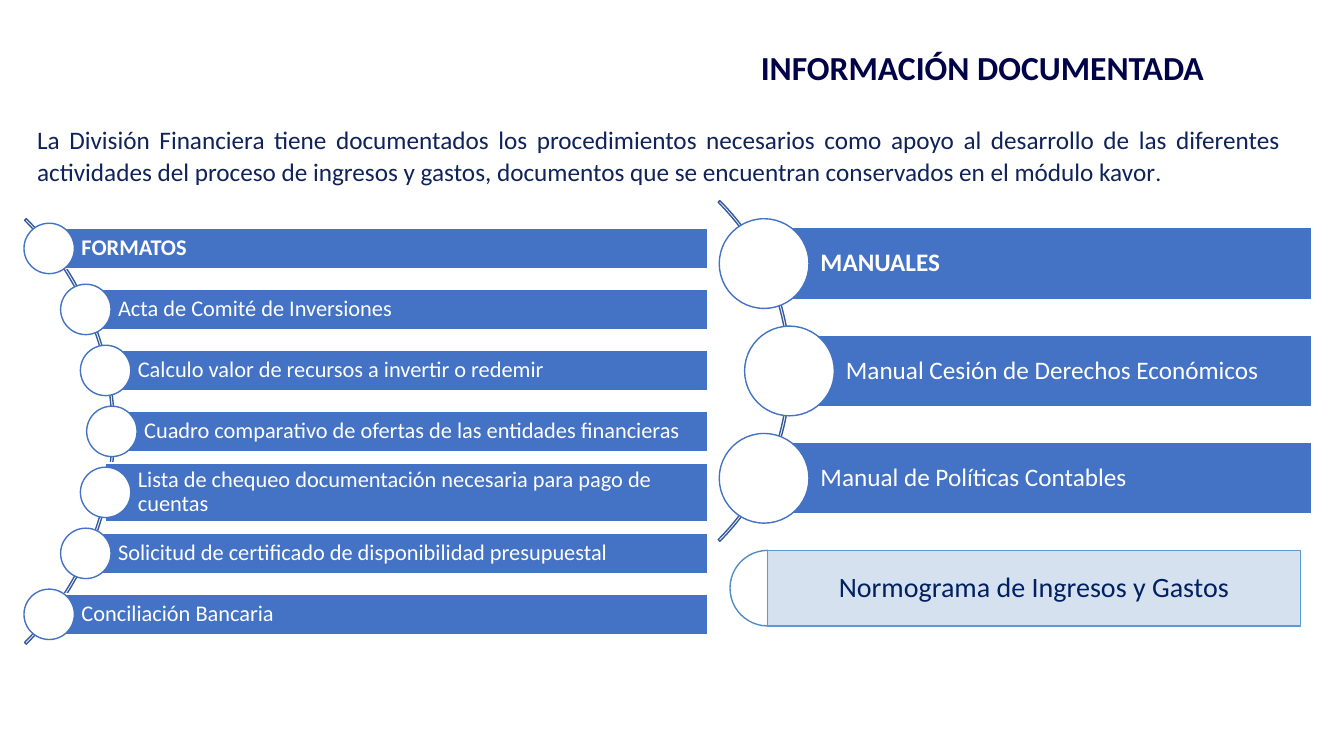
from math import sqrt

from lxml import etree
from pptx import Presentation
from pptx.dml.color import RGBColor
from pptx.enum import shapes, text
from pptx.oxml.ns import qn
from pptx.util import Inches, Pt

TITLE = "INFORMACIÓN DOCUMENTADA"
INTRO = ("La División Financiera tiene documentados los procedimientos necesarios "
         "como apoyo al desarrollo de las diferentes actividades del proceso de "
         "ingresos y gastos, documentos que se encuentran conservados en el módulo kavor")
NORMOGRAM = "Normograma de Ingresos y Gastos"

# Lengths in inches; the circles sit on an arc around (cx, cy).
MANUALS = dict(
    rows=["MANUALES", "Manual Cesión de Derechos Económicos",
          "Manual de Políticas Contables"],
    cx=5.45, cy=3.68, radius=2.38, arc=4.78, thickness=0.005, pitch=1.065,
    right=13.01, bar=0.71, circle=0.89, inset=0.56, margin=0.05, size=18, tall={})
FORMATS = dict(
    rows=["FORMATOS", "Acta de Comité de Inversiones",
          "Calculo valor de recursos a invertir o redemir",
          "Cuadro comparativo de ofertas de las entidades financieras",
          "Lista de chequeo documentación necesaria para pago de cuentas",
          "Solicitud de certificado de disponibilidad presupuestal",
          "Conciliación Bancaria"],
    cx=-1.85, cy=4.28, radius=2.96, arc=5.97, thickness=0.004, pitch=0.605,
    right=7.02, bar=0.4, circle=0.5, inset=0.32, margin=0.04, size=16, tall={4: 0.58})

WHITE = RGBColor(0xFF, 0xFF, 0xFF)
BLUE = RGBColor(0x44, 0x72, 0xC4)
ARC_BLUE = RGBColor(0x36, 0x5B, 0x9D)
PIE_BLUE = RGBColor(0x53, 0x8D, 0xC1)
BOX_LINE = RGBColor(0x5B, 0x9B, 0xD5)
BOX_FILL = RGBColor(0xD2, 0xDE, 0xEF)
BOX_TEXT = RGBColor(0x00, 0x20, 0x60)
TITLE_NAVY = RGBColor(0x00, 0x04, 0x47)
INTRO_NAVY = RGBColor(0x0F, 0x23, 0x5A)

SHAPE = shapes.MSO_SHAPE
ALIGN = text.PP_ALIGN

prs = Presentation()
prs.slide_width, prs.slide_height = Inches(13.33), Inches(7.5)
s = prs.slides.add_slide(prs.slide_layouts[6])


def add_shape(kind, x, y, w, h, fill, line, adjustments=()):
    sp = s.shapes.add_shape(kind, Inches(x), Inches(y), Inches(w), Inches(h))
    sp.shadow.inherit = False
    if fill is None:
        sp.fill.background()
    else:
        sp.fill.solid()
        sp.fill.fore_color.rgb = fill
    sp.line.color.rgb = line
    sp.line.width = Pt(1)
    for i, value in enumerate(adjustments):
        sp.adjustments[i] = value
    return sp


def set_text(sp, words, size, color, align, spacing, margins=None, bold=False):
    """Fill a shape with one paragraph; margins are left and the other three."""
    tf = sp.text_frame
    tf.word_wrap = True
    if margins:
        left, other = margins
        tf.margin_left = Inches(left)
        tf.margin_top = tf.margin_right = tf.margin_bottom = Inches(other)
        tf.vertical_anchor = text.MSO_ANCHOR.MIDDLE
    p = tf.paragraphs[0]
    p.text = words
    p.alignment = align
    p.line_spacing = spacing
    font = p.runs[0].font
    font.name, font.size, font.bold = "Calibri", Pt(size), bold
    font.color.rgb = color
    return p


def add_curved_list(spec):
    cx, cy, arc, circle = spec["cx"], spec["cy"], spec["arc"], spec["circle"]
    rows = spec["rows"]
    add_shape(SHAPE.BLOCK_ARC, cx - arc / 2, cy - arc / 2, arc, arc, None, ARC_BLUE,
              (189, 27, spec["thickness"]))
    for i, words in enumerate(rows):
        dy = (i - (len(rows) - 1) / 2) * spec["pitch"]
        x, y = cx + sqrt(spec["radius"] ** 2 - dy ** 2), cy + dy
        height = spec["tall"].get(i, spec["bar"])
        bar = add_shape(SHAPE.RECTANGLE, x, y - height / 2, spec["right"] - x, height,
                        BLUE, WHITE)
        set_text(bar, words, spec["size"], WHITE, ALIGN.LEFT, 0.9,
                 (spec["inset"], spec["margin"]), bold=i == 0)
        add_shape(SHAPE.OVAL, x - circle / 2, y - circle / 2, circle, circle, WHITE, BLUE)


def add_text_box(x, y, w, h):
    return s.shapes.add_textbox(Inches(x), Inches(y), Inches(w), Inches(h))


set_text(add_text_box(-0.35, 0.43, 12.29, 0.43), TITLE, 24, TITLE_NAVY, ALIGN.RIGHT,
         Pt(32), (0, 0), bold=True)

p = set_text(add_text_box(0.27, 1.16, 12.53, 0.75), INTRO, 18, INTRO_NAVY,
             ALIGN.JUSTIFY, 1.07)
r = p.add_run()
r.text = "."
r.font.name, r.font.size = "Karla", Pt(18)
r.font.color.rgb = INTRO_NAVY

add_curved_list(MANUALS)
add_curved_list(FORMATS)

add_shape(SHAPE.PIE, 7.24, 5.46, 0.75, 0.75, WHITE, PIE_BLUE, (54, 162))
box = add_shape(SHAPE.RECTANGLE, 7.61, 5.46, 5.29, 0.75, BOX_FILL, BOX_LINE)
fill_color = box._element.spPr.find(qn("a:solidFill"))[0]
etree.SubElement(fill_color, qn("a:alpha")).set("val", "90000")
set_text(box, NORMOGRAM, 20, BOX_TEXT, ALIGN.CENTER, 0.9, (0.08, 0.08))

prs.save("out.pptx")
